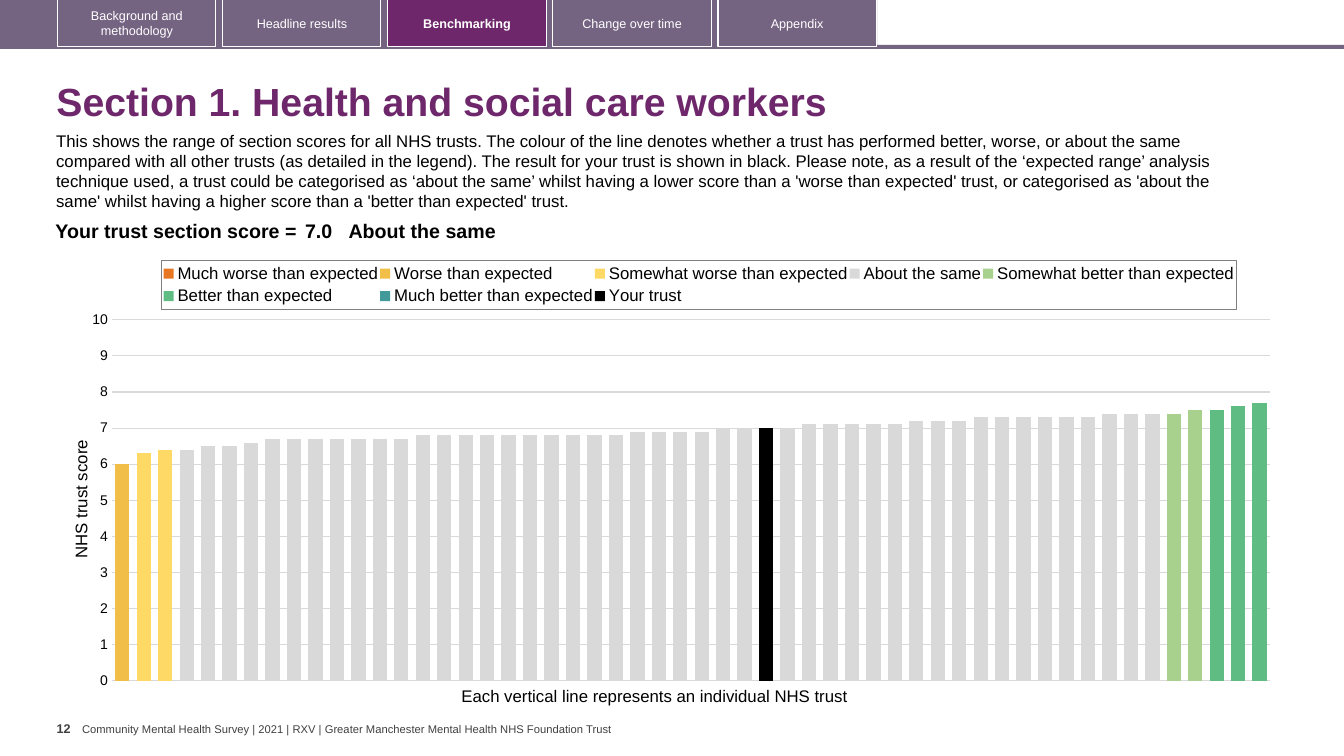
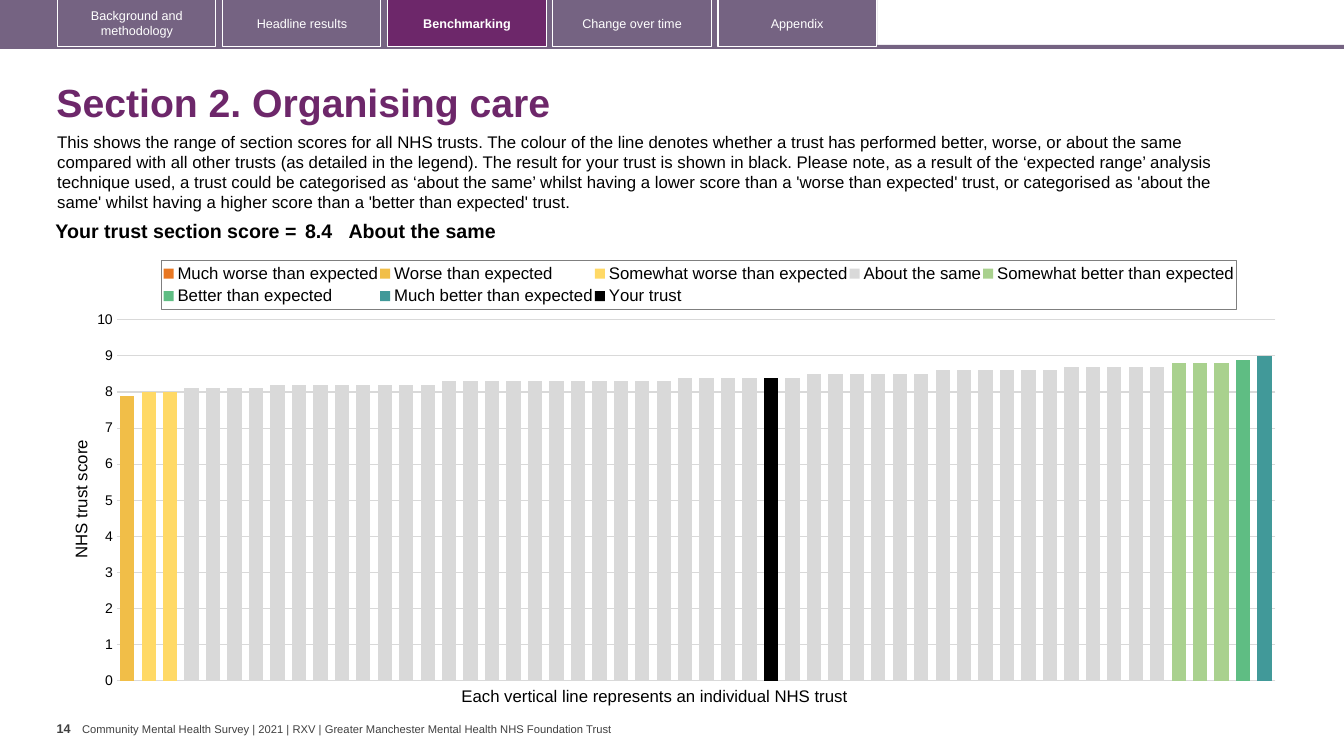
from copy import deepcopy

from lxml.etree import SubElement
from pptx import Presentation
from pptx.chart.data import CategoryChartData
from pptx.dml.color import RGBColor
from pptx.enum.chart import XL_CHART_TYPE, XL_LEGEND_POSITION, XL_TICK_MARK
from pptx.enum.shapes import MSO_SHAPE
from pptx.enum.text import MSO_ANCHOR, PP_ALIGN
from pptx.oxml import parse_xml
from pptx.oxml.ns import nsdecls, qn
from pptx.util import Pt

FONT = "Arial"
PURPLE, MAUVE, BLACK, WHITE = "6D276A", "756382", "000000", "FFFFFF"
DARK_GREY, GRID_GREY = "404040", "D9D9D9"

TABS = ["Background and methodology", "Headline results", "Benchmarking",
        "Change over time", "Appendix"]
ACTIVE_TAB = "Benchmarking"
TAB_LEFT, TAB_WIDTH, TAB_PITCH, BAND_HEIGHT = 41.3, 113, 117.9, 34

FOOTER = ("Community Mental Health Survey | 2021 | RXV | "
          "Greater Manchester Mental Health NHS Foundation Trust")
INTRO = (
    "This shows the range of section scores for all NHS trusts. The colour of the line "
    "denotes whether a trust has performed better, worse, or about the same compared with "
    "all other trusts (as detailed in the legend). The result for your trust is shown in "
    "black. Please note, as a result of the ‘expected range’ analysis technique used, a "
    "trust could be categorised as ‘about the same’ whilst having a lower score than a "
    "'worse than expected' trust, or categorised as 'about the same' whilst having a higher "
    "score than a 'better than expected' trust."
)
CAPTION = "Each vertical line represents an individual NHS trust"

RATINGS = {
    "Much worse than expected": "E87722",
    "Worse than expected": "F1BE48",
    "Somewhat worse than expected": "FFD966",
    "About the same": GRID_GREY,
    "Somewhat better than expected": "A9D18E",
    "Better than expected": "5FBD83",
    "Much better than expected": "419999",
}
TRUST_COUNT, YOUR_RANK = 54, 30

SECTIONS = [
    {
        "page": "12",
        "title": "Section 1. Health and social care workers",
        "score": 7.0,
        "heading_shift": 0,
        "plot_left": 0.036,
        "trusts_by_score": {
            "Worse than expected": [(6, 1)],
            "Somewhat worse than expected": [(6.3, 1), (6.4, 1)],
            "About the same": [(6.4, 1), (6.5, 2), (6.6, 1), (6.7, 7), (6.8, 10), (6.9, 4),
                               (7, 4), (7.1, 5), (7.2, 3), (7.3, 6), (7.4, 3)],
            "Somewhat better than expected": [(7.4, 1), (7.5, 1)],
            "Better than expected": [(7.5, 1), (7.6, 1), (7.7, 1)],
        },
    },
    {
        "page": "14",
        "title": "Section 2. Organising care",
        "score": 8.4,
        "heading_shift": 0.75,
        "plot_left": 0.04,
        "trusts_by_score": {
            "Worse than expected": [(7.9, 1)],
            "Somewhat worse than expected": [(8, 2)],
            "About the same": [(8.1, 4), (8.2, 8), (8.3, 11), (8.4, 6), (8.5, 6), (8.6, 6),
                               (8.7, 5)],
            "Somewhat better than expected": [(8.8, 3)],
            "Better than expected": [(8.9, 1)],
            "Much better than expected": [(9, 1)],
        },
    },
]


def rgb(colour):
    return RGBColor.from_string(colour)


def style_font(font, size, colour, bold=False):
    font.name = FONT
    font.size = Pt(size)
    font.bold = bold
    font.color.rgb = rgb(colour)


def set_margins(holder, horizontal, vertical):
    holder.margin_left = holder.margin_right = Pt(horizontal)
    holder.margin_top = holder.margin_bottom = Pt(vertical)


def add_text(slide, box, text, size, colour=BLACK, bold=False, wrap=False,
             anchor=MSO_ANCHOR.TOP, margins=(7.2, 3.6)):
    frame = slide.shapes.add_textbox(*map(Pt, box)).text_frame
    frame.word_wrap = wrap
    frame.vertical_anchor = anchor
    set_margins(frame, *margins)
    paragraph = frame.paragraphs[0]
    paragraph.text = text
    style_font(paragraph.font, size, colour, bold)
    return paragraph


def add_rectangle(slide, box, fill=None, outline=None):
    rectangle = slide.shapes.add_shape(MSO_SHAPE.RECTANGLE, *map(Pt, box))
    rectangle.shadow.inherit = False
    if fill:
        rectangle.fill.solid()
        rectangle.fill.fore_color.rgb = rgb(fill)
    else:
        rectangle.fill.background()
    if outline:
        rectangle.line.color.rgb = rgb(outline)
        rectangle.line.width = Pt(0.75)
    else:
        rectangle.line.fill.background()
    return rectangle


def add_navigation(slide):
    add_rectangle(slide, (0, 32, 960, 3), MAUVE)
    add_rectangle(slide, (0, 0, 626.5, BAND_HEIGHT), MAUVE)
    for index, label in enumerate(TABS):
        active = label == ACTIVE_TAB
        tab = add_rectangle(
            slide, (TAB_LEFT + index * TAB_PITCH, -0.5, TAB_WIDTH, BAND_HEIGHT),
            PURPLE if active else None, WHITE)
        tab.text_frame.word_wrap = True
        tab.text_frame.vertical_anchor = MSO_ANCHOR.MIDDLE
        paragraph = tab.text_frame.paragraphs[0]
        paragraph.text = label
        paragraph.alignment = PP_ALIGN.CENTER
        style_font(paragraph.font, 9, WHITE, active)


def add_footer(slide, page):
    add_text(slide, (58.6, 516, 383, 9.5), FOOTER, 8, DARK_GREY,
             anchor=MSO_ANCHOR.MIDDLE, margins=(0, 0))
    add_text(slide, (40.5, 511.5, 18, 28.5), page, 9, DARK_GREY, bold=True, margins=(0, 3.6))


def add_score_row(slide, score):
    table = slide.shapes.add_table(1, 3, Pt(25.5), Pt(155), Pt(842), Pt(22)).table
    table.first_row = False
    table.horz_banding = False
    columns = [("Your trust section score =", 189.5, 2.9, PP_ALIGN.RIGHT),
               (f"{score:.1f}", 34, 2.9, PP_ALIGN.LEFT),
               ("About the same", 618.5, 0, PP_ALIGN.LEFT)]
    for index, (text, width, margin, alignment) in enumerate(columns):
        table.columns[index].width = Pt(width)
        cell = table.cell(0, index)
        cell.fill.background()
        set_margins(cell, margin, 2.9)
        paragraph = cell.text_frame.paragraphs[0]
        paragraph.text = text
        paragraph.alignment = alignment
        style_font(paragraph.font, 14, BLACK, True)


def set_layout(element, position, inner=False, **fractions):
    for previous in element.findall(qn("c:layout")):
        element.remove(previous)
    layout = parse_xml(f"<c:layout {nsdecls('c')}><c:manualLayout/></c:layout>")
    settings = {"layoutTarget": "inner"} if inner else {}
    settings |= {f"{key}Mode": "edge" for key in "xy"}
    settings |= fractions
    for tag, value in settings.items():
        SubElement(layout[0], qn(f"c:{tag}")).set("val", str(value))
    element.insert(position, layout)


def score_data(section):
    data = CategoryChartData(number_format="0.0")
    data.categories = [str(rank + 1) for rank in range(TRUST_COUNT)]
    start = 0
    for rating in RATINGS:
        runs = section["trusts_by_score"].get(rating, [])
        scores = [score for score, count in runs for _ in range(count)]
        end = start + len(scores)
        data.add_series(rating, [None] * start + scores + [None] * (TRUST_COUNT - end))
        start = end
    data.add_series("Your trust", [section["score"] if rank == YOUR_RANK else None
                                   for rank in range(TRUST_COUNT)])
    return data


def style_score_axis(axis):
    axis.minimum_scale, axis.maximum_scale, axis.major_unit = 0, 10, 1
    axis.major_tick_mark = axis.minor_tick_mark = XL_TICK_MARK.NONE
    axis.format.line.fill.background()
    axis.major_gridlines.format.line.color.rgb = rgb(GRID_GREY)
    axis.major_gridlines.format.line.width = Pt(0.75)
    axis.tick_labels.number_format = "0"
    axis.tick_labels.number_format_is_linked = False
    style_font(axis.tick_labels.font, 10, BLACK)
    heading = axis.axis_title.text_frame.paragraphs[0]
    heading.text = "NHS trust score"
    style_font(heading.font, 12, BLACK)
    set_layout(axis.axis_title._element, 1, x=0, y=0.42)


def style_legend(chart):
    chart.has_legend = True
    legend = chart.legend
    legend.position = XL_LEGEND_POSITION.TOP
    legend.include_in_layout = False
    style_font(legend.font, 12, BLACK)
    set_layout(legend._element, 1, x=0.077, y=0.025, w=0.877, h=0.11)
    border = parse_xml(
        f"<c:spPr {nsdecls('c', 'a')}><a:ln w='9525'><a:solidFill>"
        "<a:srgbClr val='7F7F7F'/></a:solidFill></a:ln></c:spPr>")
    legend._element.find(qn("c:txPr")).addprevious(border)


def move_your_trust_to_right_axis(plot_area):
    rated = plot_area.find(qn("c:barChart"))
    yours = deepcopy(rated)
    rated.remove(rated.findall(qn("c:ser"))[-1])
    for series in yours.findall(qn("c:ser"))[:-1]:
        yours.remove(series)
    rated.addnext(yours)
    ranks, scores = (plot_area.find(qn(f"c:{tag}")) for tag in ("catAx", "valAx"))
    right_scores, right_ranks = deepcopy(scores), deepcopy(ranks)
    scores.addnext(right_scores)
    right_scores.addnext(right_ranks)
    for tag in ("majorGridlines", "title"):
        right_scores.remove(right_scores.find(qn(f"c:{tag}")))
    for tag, value in {"axPos": "r", "majorTickMark": "out",
                       "tickLblPos": "none", "crosses": "max"}.items():
        right_scores.find(qn(f"c:{tag}")).set("val", value)
    new_ids = {ranks.find(qn("c:axId")).get("val"): "50010",
               scores.find(qn("c:axId")).get("val"): "50020"}
    for part in (yours, right_scores, right_ranks):
        for reference in part.iter(qn("c:axId"), qn("c:crossAx")):
            reference.set("val", new_ids[reference.get("val")])


def add_score_chart(slide, section):
    chart = slide.shapes.add_chart(
        XL_CHART_TYPE.COLUMN_CLUSTERED, Pt(48.25), Pt(178), Pt(875), Pt(319.5),
        score_data(section)).chart
    chart.has_title = False
    chart.font.name = "Calibri"
    chart.font.size = Pt(10)
    plot = chart.plots[0]
    plot.vary_by_categories = False
    plot.gap_width, plot.overlap = 50, 100
    for series, colour in zip(plot.series, [*RATINGS.values(), BLACK]):
        series.format.fill.solid()
        series.format.fill.fore_color.rgb = rgb(colour)
    chart.category_axis.visible = False
    style_score_axis(chart.value_axis)
    style_legend(chart)
    plot_area = chart._chartSpace.chart.plotArea
    move_your_trust_to_right_axis(plot_area)
    set_layout(plot_area, 0, inner=True, x=section["plot_left"], y=0.158, w=0.946, h=0.807)


def add_section(deck, section):
    slide = deck.slides.add_slide(deck.slide_layouts[6])
    shift = section["heading_shift"]
    add_navigation(slide)
    title = add_text(slide, (33.25, 48.25 + shift, 899, 52), section["title"], 28, PURPLE,
                     bold=True, wrap=True, anchor=MSO_ANCHOR.MIDDLE)
    title.line_spacing = 0.9
    add_text(slide, (33 + shift, 89.75 + shift, 873.5, 65.5), INTRO, 12, wrap=True)
    add_score_chart(slide, section)
    add_text(slide, (322.5, 486, 296, 21.5), CAPTION, 12)
    add_score_row(slide, section["score"])
    add_footer(slide, section["page"])


def main():
    deck = Presentation()
    deck.slide_width, deck.slide_height = Pt(960), Pt(540)
    for section in SECTIONS:
        add_section(deck, section)
    deck.save("out.pptx")


if __name__ == "__main__":
    main()
